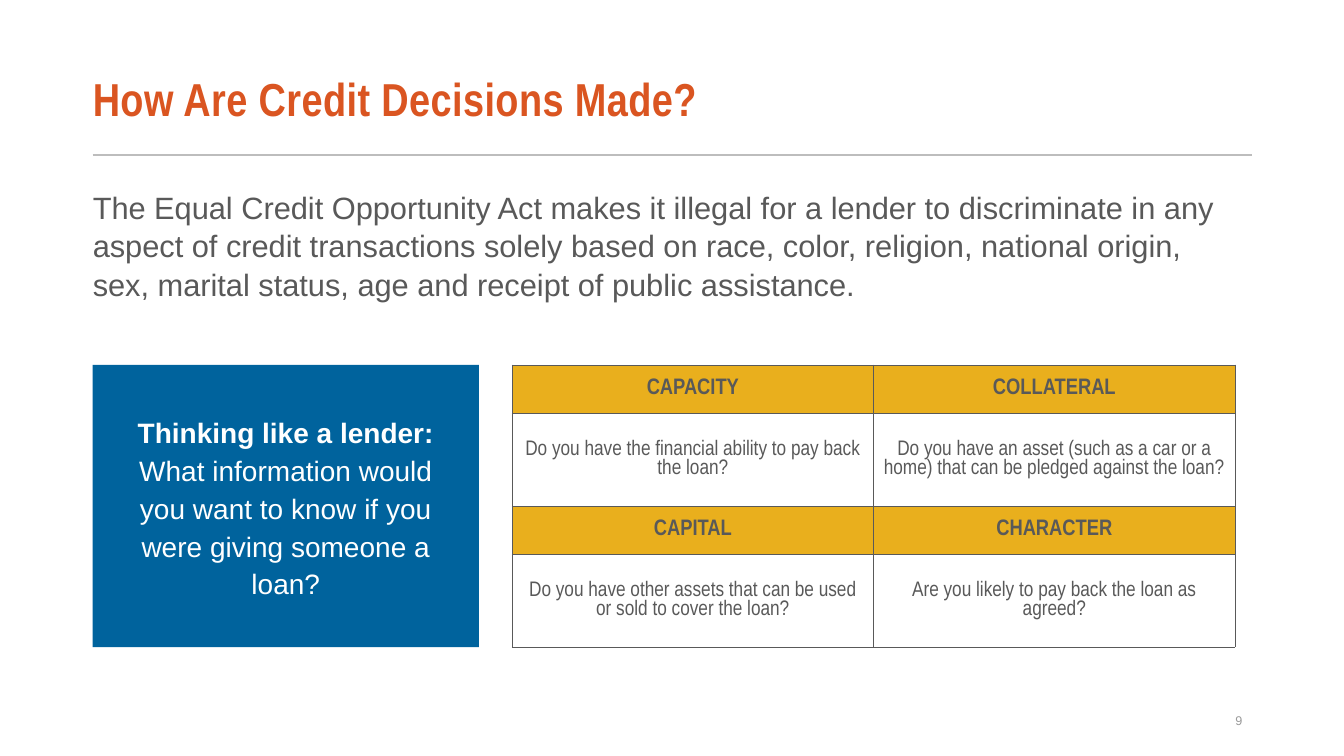
from lxml.etree import SubElement
from pptx import Presentation
from pptx.dml.color import RGBColor
from pptx.enum.shapes import MSO_CONNECTOR, MSO_SHAPE
from pptx.enum.text import MSO_ANCHOR as Anchor, MSO_AUTO_SIZE as Auto, PP_ALIGN as Align
from pptx.oxml import parse_xml
from pptx.oxml.ns import nsdecls, qn
from pptx.util import Inches, Pt

ORANGE, BLUE, GOLD = "DA5521", "00639D", "E9AF1D"
DARK, GREY, RULE, WHITE = "595959", "9A9A9A", "BDBDBD", "FFFFFF"
SANS, NARROW = "Arial", "Arial Narrow"
LEFT, TOP = 0.92, 3.62

TITLE = "How Are Credit Decisions Made?"
ACT = ("The Equal Credit Opportunity Act makes it illegal for a lender to "
       "discriminate in any aspect of credit transactions solely based on race, "
       "color, religion, national origin, sex, marital status, age and receipt "
       "of public assistance.")
LEAD = "Thinking like a lender: "
ASK = "What information would you want to know if you were giving someone a loan?"
GRID = [
    ["CAPACITY", "COLLATERAL"],
    ["Do you have the financial ability to pay back the loan?",
     "Do you have an asset (such as a car or a home) that can be pledged against the loan?"],
    ["CAPITAL", "CHARACTER"],
    ["Do you have other assets that can be used or sold to cover the loan?",
     "Are you likely to pay back the loan as agreed?"],
]


def color(code):
    return RGBColor.from_string(code)


def paint(fill, code):
    fill.solid()
    fill.fore_color.rgb = color(code)


def style(run, size, code, face=SANS, bold=False):
    font = run.font
    font.size, font.name, font.bold = Pt(size), face, bold
    font.color.rgb = color(code)


def place(shape, x, y, w, h):
    shape.left, shape.top = Inches(x), Inches(y)
    shape.width, shape.height = Inches(w), Inches(h)


def setup(frame, anchor, left=0.1, right=0.1):
    frame.word_wrap = True
    frame.auto_size = Auto.NONE
    frame.vertical_anchor = anchor
    frame.margin_left, frame.margin_right = Inches(left), Inches(right)
    frame.margin_top = frame.margin_bottom = Inches(0.05)


def add_title(slide):
    title = slide.shapes.title
    place(title, LEFT, 0.54, 11.5, 0.95)
    frame = title.text_frame
    setup(frame, Anchor.MIDDLE, left=0)
    frame.text = TITLE
    para = frame.paragraphs[0]
    para.alignment, para.line_spacing = Align.LEFT, 0.87
    run = para.runs[0]
    style(run, 33, ORANGE, NARROW, True)
    run.font._element.set("spc", "30")


def add_body(slide):
    body = slide.placeholders[1]
    place(body, LEFT, 1.8, 11.33, 1.95)
    frame = body.text_frame
    setup(frame, Anchor.TOP, left=0)
    frame.text = ACT
    para = frame.paragraphs[0]
    para.line_spacing, para.space_before = 1.05, Pt(0)
    props = para._p.get_or_add_pPr()
    props.set("marL", "0")
    props.set("indent", "0")
    SubElement(props, qn("a:buNone"))
    style(para.runs[0], 22, DARK)


def add_rule(slide):
    line = slide.shapes.add_connector(
        MSO_CONNECTOR.STRAIGHT, Inches(LEFT), Inches(1.54), Inches(12.42), Inches(1.54))
    line.line.color.rgb = color(RULE)
    line.line.width = Pt(1.5)
    SubElement(line._element.spPr, qn("a:effectLst"))


def add_number(slide):
    box = slide.shapes.add_textbox(Inches(9.42), Inches(6.95), Inches(3), Inches(0.4))
    frame = box.text_frame
    setup(frame, Anchor.MIDDLE)
    frame.text = "9"
    para = frame.paragraphs[0]
    para.alignment = Align.RIGHT
    style(para.runs[0], 9, GREY)


def add_panel(slide):
    panel = slide.shapes.add_shape(
        MSO_SHAPE.RECTANGLE, Inches(LEFT), Inches(TOP), Inches(3.83), Inches(2.8))
    panel.shadow.inherit = False
    paint(panel.fill, BLUE)
    panel.line.fill.background()
    setup(panel.text_frame, Anchor.MIDDLE, 0.2, 0.2)
    para = panel.text_frame.paragraphs[0]
    para.alignment, para.line_spacing = Align.CENTER, Pt(27)
    for text, bold in ((LEAD, True), (ASK, False)):
        run = para.add_run()
        run.text = text
        style(run, 20, WHITE, bold=bold)


def border(cell):
    props = cell._tc.get_or_add_tcPr()
    for side in ("lnL", "lnR", "lnT", "lnB"):
        props.append(parse_xml(
            f'<a:{side} {nsdecls("a")} w="{Pt(0.5)}"><a:solidFill>'
            f'<a:srgbClr val="{DARK}"/></a:solidFill></a:{side}>'))


def fill_cell(cell, text, head):
    border(cell)
    paint(cell.fill, GOLD if head else WHITE)
    cell.vertical_anchor = Anchor.MIDDLE
    cell.text_frame.text = text
    para = cell.text_frame.paragraphs[0]
    para.alignment = Align.CENTER
    style(para.runs[0], 16 if head else 15, DARK, NARROW, head)


def add_grid(slide):
    table = slide.shapes.add_table(
        4, 2, Inches(5.08), Inches(TOP), Inches(7.17), Inches(2.8)).table
    table.first_row = table.horz_banding = False
    for r, texts in enumerate(GRID):
        head = r % 2 == 0
        table.rows[r].height = Inches(0.48 if head else 0.92)
        for c, text in enumerate(texts):
            fill_cell(table.cell(r, c), text, head)


def main():
    deck = Presentation()
    deck.slide_width, deck.slide_height = Inches(13.33), Inches(7.5)
    slide = deck.slides.add_slide(deck.slide_layouts[1])
    add_rule(slide)
    add_title(slide)
    add_body(slide)
    add_number(slide)
    add_panel(slide)
    add_grid(slide)
    deck.save("out.pptx")


if __name__ == "__main__":
    main()
